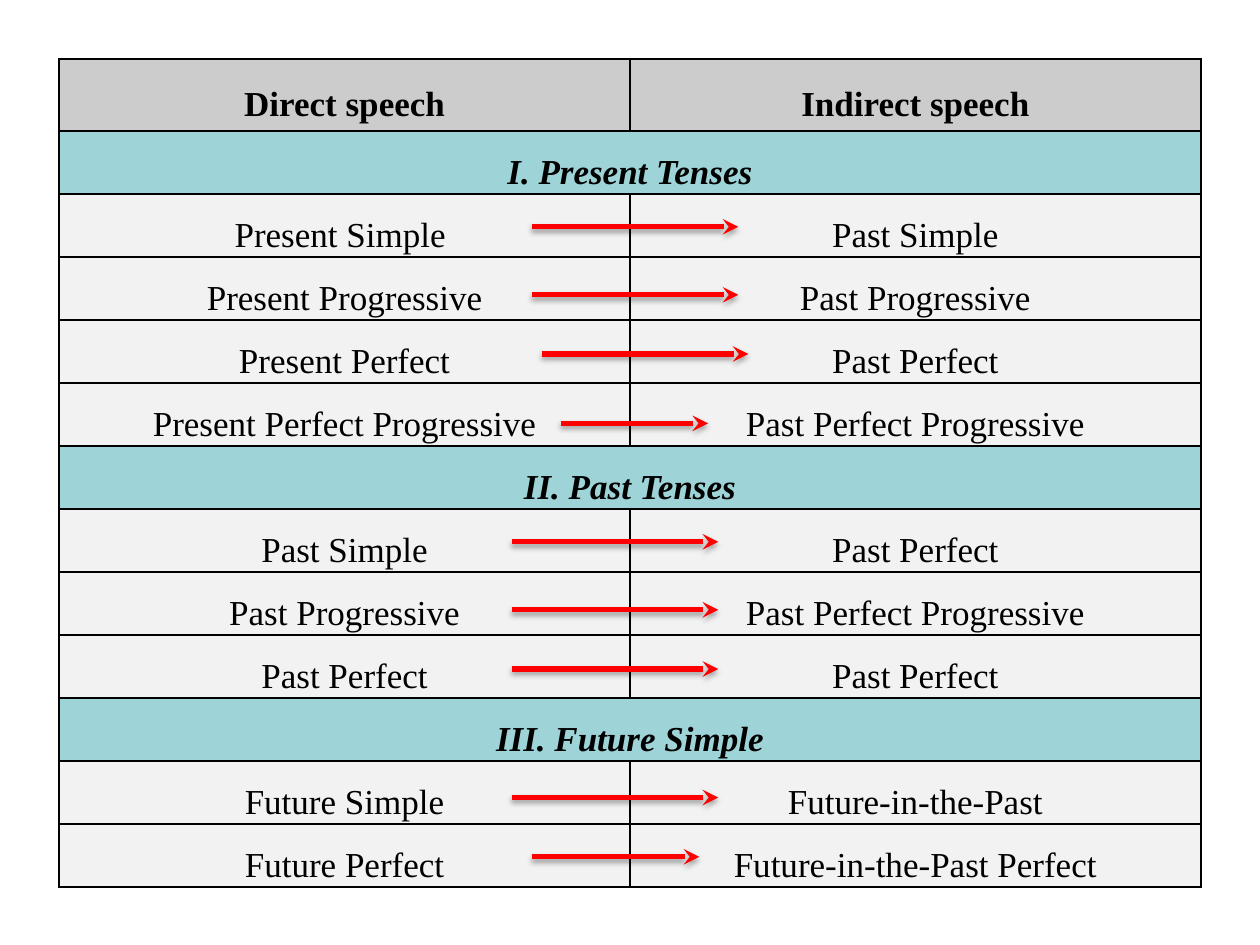
from dataclasses import dataclass

import pptx
import pptx.dml.color
import pptx.enum.shapes
import pptx.enum.text
import pptx.oxml
import pptx.oxml.ns
import pptx.util

Inches = pptx.util.Inches
Pt = pptx.util.Pt
rgb = pptx.dml.color.RGBColor.from_string
NS = pptx.oxml.ns.nsdecls("a")


@dataclass(frozen=True)
class Theme:
    font: str = "Times New Roman"
    size: int = 20
    ink: str = "000000"
    header: str = "CCCCCC"
    section: str = "9ED3D7"
    tense: str = "F2F2F2"
    arrow: str = "FF0000"
    arrow_width: int = 3
    border_width: int = 1


THEME = Theme()
HEADER_HEIGHT, ROW_HEIGHT = 0.57, 0.5

# Direct tense, indirect tense, arrow start and end from the table's left
# edge, arrow offset below the row's middle. A section has a title only.
ROWS = [
    ("I. Present Tenses",),
    ("Present Simple ", "Past Simple", 3.75, 5.39, 0.01),
    ("Present Progressive", "Past Progressive", 3.75, 5.39, 0.05),
    ("Present Perfect", "Past Perfect", 3.83, 5.47, 0.02),
    ("Present Perfect Progressive", "Past Perfect Progressive", 3.98, 5.15, 0.07),
    ("II. Past Tenses",),
    ("Past Simple", "Past Perfect", 3.59, 5.23, 0.01),
    ("Past Progressive", "Past Perfect Progressive", 3.59, 5.23, 0.05),
    ("Past Perfect", "Past Perfect", 3.59, 5.23, 0.02),
    ("III. Future Simple",),
    ("Future Simple", "Future-in-the-Past", 3.59, 5.23, 0.04),
    ("Future Perfect", "Future-in-the-Past Perfect", 3.75, 5.08, 0.01),
]


def style_cell(cell, fill):
    cell.fill.solid()
    cell.fill.fore_color.rgb = rgb(fill)
    cell.margin_left = cell.margin_right = Inches(0.07)
    cell.margin_top = cell.margin_bottom = 0
    cell.vertical_anchor = pptx.enum.text.MSO_ANCHOR.MIDDLE
    # Borders come before the fill in the cell properties
    properties = cell._tc.get_or_add_tcPr()
    for position, side in enumerate(("lnL", "lnR", "lnT", "lnB")):
        properties.insert(position, pptx.oxml.parse_xml(
            f'<a:{side} {NS} w="{Pt(THEME.border_width)}"><a:solidFill>'
            f'<a:srgbClr val="{THEME.ink}"/></a:solidFill></a:{side}>'))


def write_cell(cell, text, bold=False, italic=False):
    paragraph = cell.text_frame.paragraphs[0]
    paragraph.alignment = pptx.enum.text.PP_ALIGN.CENTER
    paragraph.line_spacing = 1.5
    run = paragraph.add_run()
    run.text = text
    run.font.name, run.font.size = THEME.font, Pt(THEME.size)
    run.font.bold, run.font.italic = bold, italic
    run.font.color.rgb = rgb(THEME.ink)


def add_tense_table(slide, left, top, width):
    height = HEADER_HEIGHT + ROW_HEIGHT * len(ROWS)
    table = slide.shapes.add_table(
        len(ROWS) + 1, 2, Inches(left), Inches(top), Inches(width), Inches(height)).table
    table.first_row = table.horz_banding = False
    for column in table.columns:
        column.width = Inches(width / 2)

    # Header row
    table.rows[0].height = Inches(HEADER_HEIGHT)
    for column, heading in enumerate(("Direct speech", "Indirect speech")):
        style_cell(table.cell(0, column), THEME.header)
        write_cell(table.cell(0, column), heading, bold=True)

    # Section and tense rows
    for index, (direct, *rest) in enumerate(ROWS, start=1):
        table.rows[index].height = Inches(ROW_HEIGHT)
        is_section = not rest
        for column in range(2):
            style_cell(table.cell(index, column),
                       THEME.section if is_section else THEME.tense)
        write_cell(table.cell(index, 0), direct, bold=is_section, italic=is_section)
        if is_section:
            table.cell(index, 0).merge(table.cell(index, 1))
        else:
            write_cell(table.cell(index, 1), rest[0])


def add_arrow(slide, start, end, y):
    arrow = slide.shapes.add_connector(
        pptx.enum.shapes.MSO_CONNECTOR.STRAIGHT,
        Inches(start), Inches(y), Inches(end), Inches(y))
    arrow.line.color.rgb = rgb(THEME.arrow)
    arrow.line.width = Pt(THEME.arrow_width)
    arrow.line._get_or_add_ln().append(
        pptx.oxml.parse_xml(f'<a:tailEnd {NS} type="stealth"/>'))
    # Soft shadow straight below the line
    arrow._element.spPr.append(pptx.oxml.parse_xml(
        f'<a:effectLst {NS}><a:outerShdw blurRad="{Pt(3.1)}" dist="{Pt(1.8)}" '
        f'dir="5400000" rotWithShape="0"><a:srgbClr val="{THEME.ink}">'
        '<a:alpha val="35000"/></a:srgbClr></a:outerShdw></a:effectLst>'))


def add_tense_arrows(slide, left, top):
    for index, row in enumerate(ROWS):
        if len(row) > 1:
            start, end, offset = row[2:]
            middle = top + HEADER_HEIGHT + ROW_HEIGHT * (index + 0.5)
            add_arrow(slide, left + start, left + end, middle + offset)


def main():
    deck = pptx.Presentation()
    deck.slide_width, deck.slide_height = Inches(10), Inches(7.5)
    slide = deck.slides.add_slide(deck.slide_layouts[6])
    left = top = 0.47
    add_tense_table(slide, left, top, width=9.06)
    add_tense_arrows(slide, left, top)
    deck.save("out.pptx")


if __name__ == "__main__":
    main()
